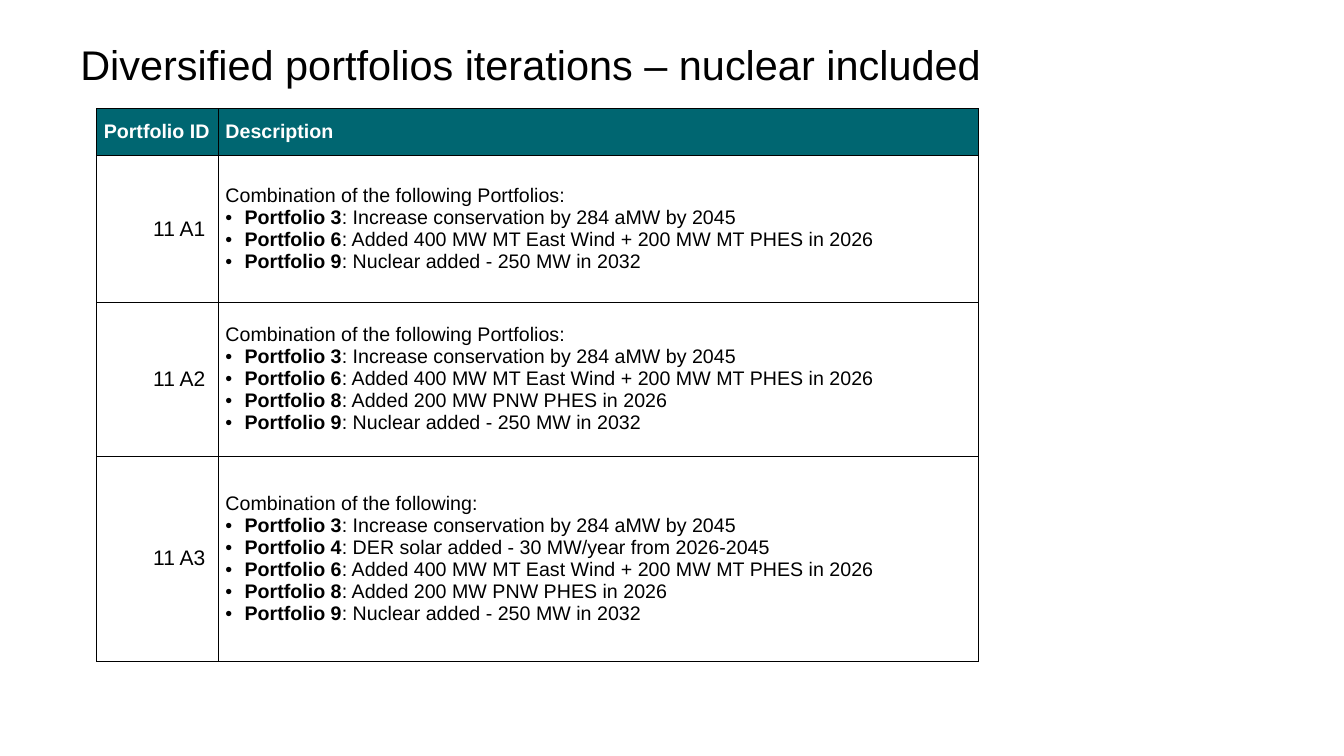
import lxml.etree
import pptx
import pptx.dml.color
import pptx.enum.text
import pptx.oxml.ns
import pptx.util

WIDTH = pptx.util.Inches(13.33)
HEIGHT = pptx.util.Inches(7.5)
TITLE_BOX = (0.05, 0.053, 0.866, 0.076)
TABLE_BOX = (0.072, 0.144, 0.656, 0.731)
COLUMN_SHARES = (0.138, 0.862)
ROW_SHARES = (0.084, 0.266, 0.278, 0.372)
BLACK, WHITE, TEAL = "000000", "FFFFFF", "006671"
TEXT_INSETS = (0.07, 0.03, 0.07, 0.03)
ID_INSETS = (0, 0, 0.13, 0)

MEASURES = {
    3: "Increase conservation by 284 aMW by 2045",
    4: "DER solar added - 30 MW/year from 2026-2045",
    6: "Added 400 MW MT East Wind + 200 MW MT PHES in 2026",
    8: "Added 200 MW PNW PHES in 2026",
    9: "Nuclear added - 250 MW in 2032",
}
PORTFOLIOS = [
    ("11 A1", "Combination of the following Portfolios:", (3, 6, 9)),
    ("11 A2", "Combination of the following Portfolios:", (3, 6, 8, 9)),
    ("11 A3", "Combination of the following:", (3, 4, 6, 8, 9)),
]


def colour(value):
    return pptx.dml.color.RGBColor.from_string(value)


def place(box):
    left, top, width, height = box
    return (round(left * WIDTH), round(top * HEIGHT),
            round(width * WIDTH), round(height * HEIGHT))


def child(parent, tag, **attributes):
    return lxml.etree.SubElement(parent, pptx.oxml.ns.qn(tag), **attributes)


def add_span(para, text, size, bold=False, ink=BLACK):
    span = para.add_run()
    span.text = text
    span.font.name = "Arial"
    span.font.size = pptx.util.Pt(size)
    span.font.bold = bold
    span.font.color.rgb = colour(ink)


def set_insets(target, insets):
    sides = ("margin_left", "margin_top", "margin_right", "margin_bottom")
    for side, inset in zip(sides, insets):
        setattr(target, side, pptx.util.Inches(inset))
    target.vertical_anchor = pptx.enum.text.MSO_ANCHOR.MIDDLE


def add_bullet(para):
    indent = pptx.util.Inches(0.19)
    properties = para._p.get_or_add_pPr()
    properties.set("marL", str(indent))
    properties.set("indent", str(-indent))
    child(child(properties, "a:buClr"), "a:srgbClr", val=BLACK)
    child(properties, "a:buFont", typeface="Arial")
    child(properties, "a:buChar", char="•")


def style_cell(cell, insets, border, fill=None):
    set_insets(cell, insets)
    properties = cell._tc.get_or_add_tcPr()
    for side in ("a:lnL", "a:lnR", "a:lnT", "a:lnB"):
        line = child(properties, side, w=str(pptx.util.Pt(border)))
        child(child(line, "a:solidFill"), "a:srgbClr", val=BLACK)
    if fill:
        cell.fill.solid()
        cell.fill.fore_color.rgb = colour(fill)
    else:
        cell.fill.background()


def fill_title(page, box):
    title = page.shapes.title
    title.left, title.top, title.width, title.height = place(box)
    frame = title.text_frame
    frame.word_wrap = True
    frame.auto_size = pptx.enum.text.MSO_AUTO_SIZE.NONE
    set_insets(frame, (0.13, 0.07, 0.13, 0.07))
    para = frame.paragraphs[0]
    para.alignment = pptx.enum.text.PP_ALIGN.LEFT
    para.line_spacing = 0.8
    add_span(para, "Diversified portfolios iterations – nuclear included", 29.6)


def fill_description(cell, heading, numbers):
    frame = cell.text_frame
    add_span(frame.paragraphs[0], heading, 14)
    for number in numbers:
        para = frame.add_paragraph()
        add_bullet(para)
        add_span(para, f"Portfolio {number}", 14, bold=True)
        add_span(para, f": {MEASURES[number]}", 14)


def add_portfolio_table(page, box):
    left, top, width, height = place(box)
    table = page.shapes.add_table(
        len(ROW_SHARES), len(COLUMN_SHARES), left, top, width, height).table
    table.first_row = True
    table.horz_banding = False
    for column, share in zip(table.columns, COLUMN_SHARES):
        column.width = round(width * share)
    for row, share in zip(table.rows, ROW_SHARES):
        row.height = round(height * share)
    for index, label in enumerate(("Portfolio ID", "Description")):
        cell = table.cell(0, index)
        style_cell(cell, TEXT_INSETS, 1, TEAL)
        add_span(cell.text_frame.paragraphs[0], label, 14, bold=True, ink=WHITE)
    for index, (name, heading, numbers) in enumerate(PORTFOLIOS, start=1):
        name_cell, description_cell = table.cell(index, 0), table.cell(index, 1)
        style_cell(name_cell, ID_INSETS, 0.5)
        style_cell(description_cell, TEXT_INSETS, 0.5)
        para = name_cell.text_frame.paragraphs[0]
        para.alignment = pptx.enum.text.PP_ALIGN.RIGHT
        add_span(para, name, 15)
        fill_description(description_cell, heading, numbers)


def main():
    deck = pptx.Presentation()
    deck.slide_width = WIDTH
    deck.slide_height = HEIGHT
    page = deck.slides.add_slide(deck.slide_layouts.get_by_name("Title Only"))
    add_portfolio_table(page, TABLE_BOX)
    fill_title(page, TITLE_BOX)
    deck.save("out.pptx")


if __name__ == "__main__":
    main()
